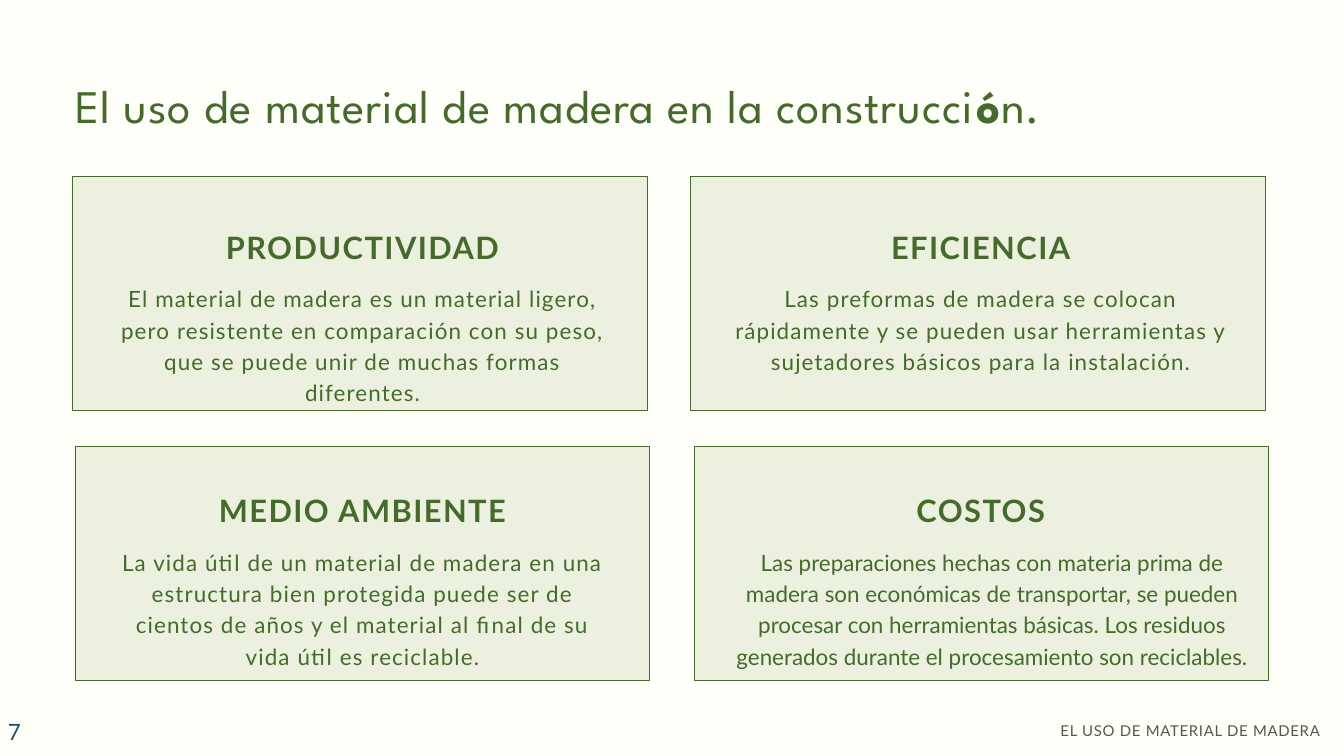
import dataclasses

import pptx
import pptx.dml.color
import pptx.enum.shapes
import pptx.enum.text
import pptx.util

Inches = pptx.util.Inches
Pt = pptx.util.Pt
Align = pptx.enum.text.PP_ALIGN
Anchor = pptx.enum.text.MSO_ANCHOR


@dataclasses.dataclass(frozen=True)
class TextStyle:
    size: float
    color: str
    leading: float = None
    tracking: float = 0
    align: int = Align.LEFT
    bold: bool = False
    font: str = "Lato"


@dataclasses.dataclass(frozen=True)
class Theme:
    background: str = "FEFFF8"
    card_fill: str = "EBF1DE"
    green: str = "456A2C"
    title: TextStyle = TextStyle(50, "456A2C", 66.8, 1, font="League Spartan")
    heading: TextStyle = TextStyle(33, "456A2C", 41.2, 1.6, Align.CENTER, True)
    detail: TextStyle = TextStyle(24, "456A2C", 33.6, 1.2, Align.CENTER)
    tight_detail: TextStyle = TextStyle(24, "456A2C", 33.6, 0, Align.CENTER)
    footer: TextStyle = TextStyle(16, "52584D", 22.4, 0.8, Align.RIGHT)
    number: TextStyle = TextStyle(24, "1E4D65", tracking=1.2)


def rgb(value):
    return pptx.dml.color.RGBColor.from_string(value)


class SlideBuilder:
    def __init__(self, page, theme):
        self.page = page
        self.theme = theme
        page.background.fill.solid()
        page.background.fill.fore_color.rgb = rgb(theme.background)

    def set_text(self, box, style, spans, anchor=Anchor.TOP, margins=(0, 0)):
        frame = box.text_frame
        frame.word_wrap = True
        frame.auto_size = pptx.enum.text.MSO_AUTO_SIZE.NONE
        frame.vertical_anchor = anchor
        frame.margin_left = frame.margin_right = Inches(margins[0])
        frame.margin_top = frame.margin_bottom = Inches(margins[1])
        para = frame.paragraphs[0]
        para.alignment = style.align
        if style.leading:
            para.line_spacing = Pt(style.leading)
        for words, bold in spans:
            span = para.add_run()
            span.text = words
            span.font.name = style.font
            span.font.size = Pt(style.size)
            span.font.bold = bold
            span.font.color.rgb = rgb(style.color)
            if style.tracking:
                span.font._element.set("spc", str(round(style.tracking * 100)))

    def title(self, spans, left, top, width, height):
        box = self.page.shapes.title
        box.left, box.top = Inches(left), Inches(top)
        box.width, box.height = Inches(width), Inches(height)
        self.set_text(box, self.theme.title, spans)

    def text(self, shapes, words, style, left, top, width, height, **layout):
        box = shapes.add_textbox(Inches(left), Inches(top), Inches(width), Inches(height))
        self.set_text(box, style, [(words, style.bold)], **layout)

    def panel(self, left, top, width, height):
        box = self.page.shapes.add_shape(
            pptx.enum.shapes.MSO_SHAPE.RECTANGLE,
            Inches(left), Inches(top), Inches(width), Inches(height))
        box.shadow.inherit = False
        box.fill.solid()
        box.fill.fore_color.rgb = rgb(self.theme.card_fill)
        box.line.color.rgb = rgb(self.theme.green)
        box.line.width = Pt(0.75)

    def card(self, heading, detail, corner, text_corner, tight=False):
        self.panel(*corner, 8.55, 3.48)
        left, top = text_corner
        group = self.page.shapes.add_group_shape()
        self.text(group.shapes, heading, self.theme.heading, left, top, 7.39, 0.56)
        if tight:
            self.text(group.shapes, detail, self.theme.tight_detail,
                      left - 0.04, top + 0.8, 7.8, 1.87)
        else:
            self.text(group.shapes, detail, self.theme.detail,
                      left, top + 0.8, 7.39, 1.87)


def main():
    deck = pptx.Presentation()
    deck.slide_width, deck.slide_height = Inches(20), Inches(11.25)
    page = deck.slides.add_slide(deck.slide_layouts.get_by_name("Title Only"))
    theme = Theme()
    builder = SlideBuilder(page, theme)

    builder.title([("El uso de material de madera en la construcci", False),
                   ("ó", True), ("n.", False)], 1.12, 1.05, 18.21, 0.92)
    builder.text(page.shapes, "EL USO DE MATERIAL DE MADERA", theme.footer,
                 11.33, 10.7, 8.32, 0.29)

    builder.card(
        "PRODUCTIVIDAD",
        "El material de madera es un material ligero, pero resistente en comparación "
        "con su peso, que se puede unir de muchas formas diferentes.",
        (1.08, 2.62), (1.7, 3.38))
    builder.card(
        "EFICIENCIA",
        "Las preformas de madera se colocan rápidamente y se pueden usar herramientas "
        "y sujetadores básicos para la instalación.",
        (10.28, 2.62), (10.9, 3.38))
    builder.card(
        "MEDIO AMBIENTE",
        "La vida útil de un material de madera en una estructura bien protegida puede "
        "ser de cientos de años y el material al final de su vida útil es reciclable.",
        (1.12, 6.64), (1.7, 7.3))
    builder.card(
        "COSTOS",
        "Las preparaciones hechas con materia prima de madera son económicas de "
        "transportar, se pueden procesar con herramientas básicas. Los residuos "
        "generados durante el procesamiento son reciclables.",
        (10.33, 6.64), (10.9, 7.3), tight=True)

    builder.text(page.shapes, "7", theme.number, 0.02, 10.69, 2.33, 0.4,
                 anchor=Anchor.MIDDLE, margins=(0.1, 0.05))
    deck.save("out.pptx")


if __name__ == "__main__":
    main()
